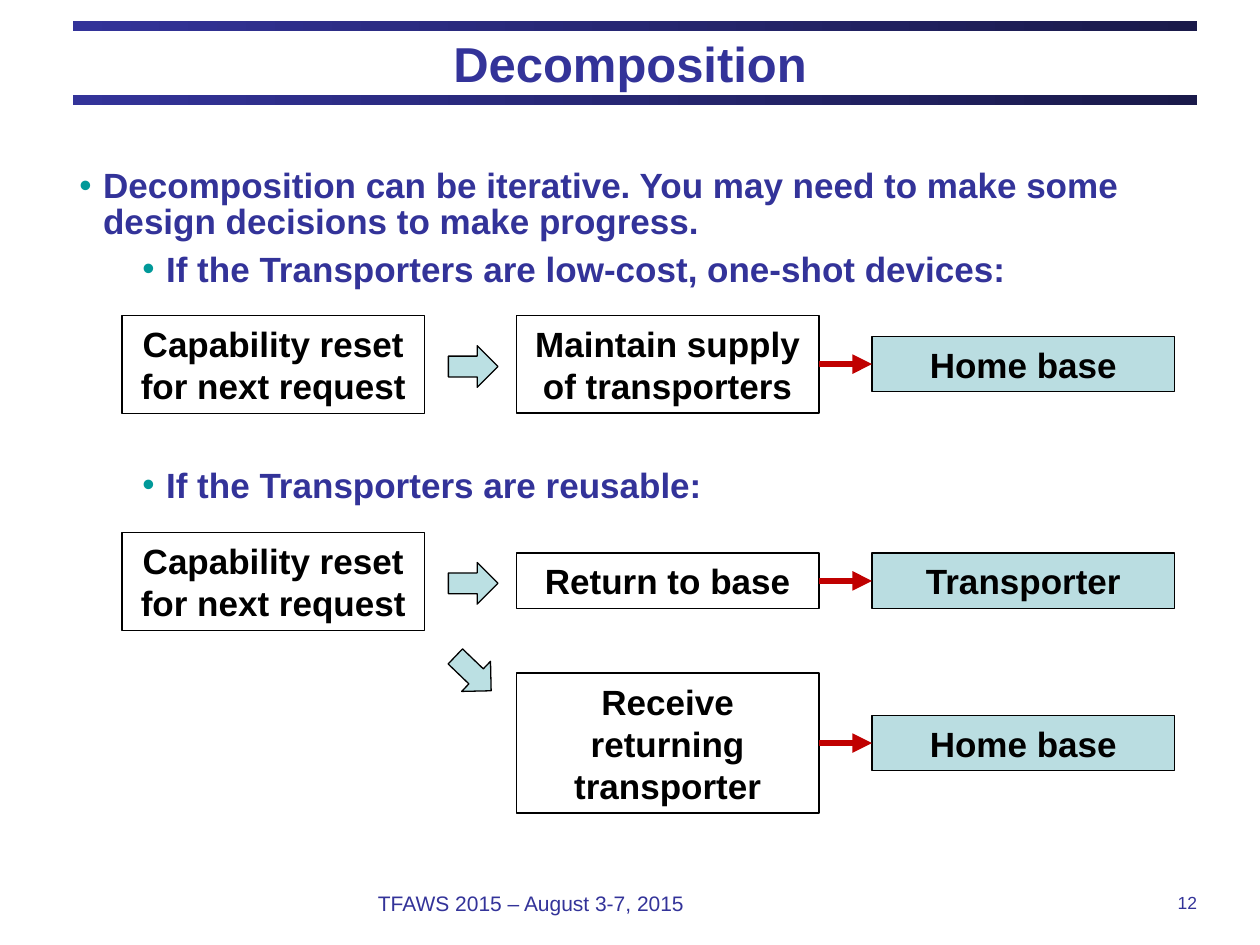
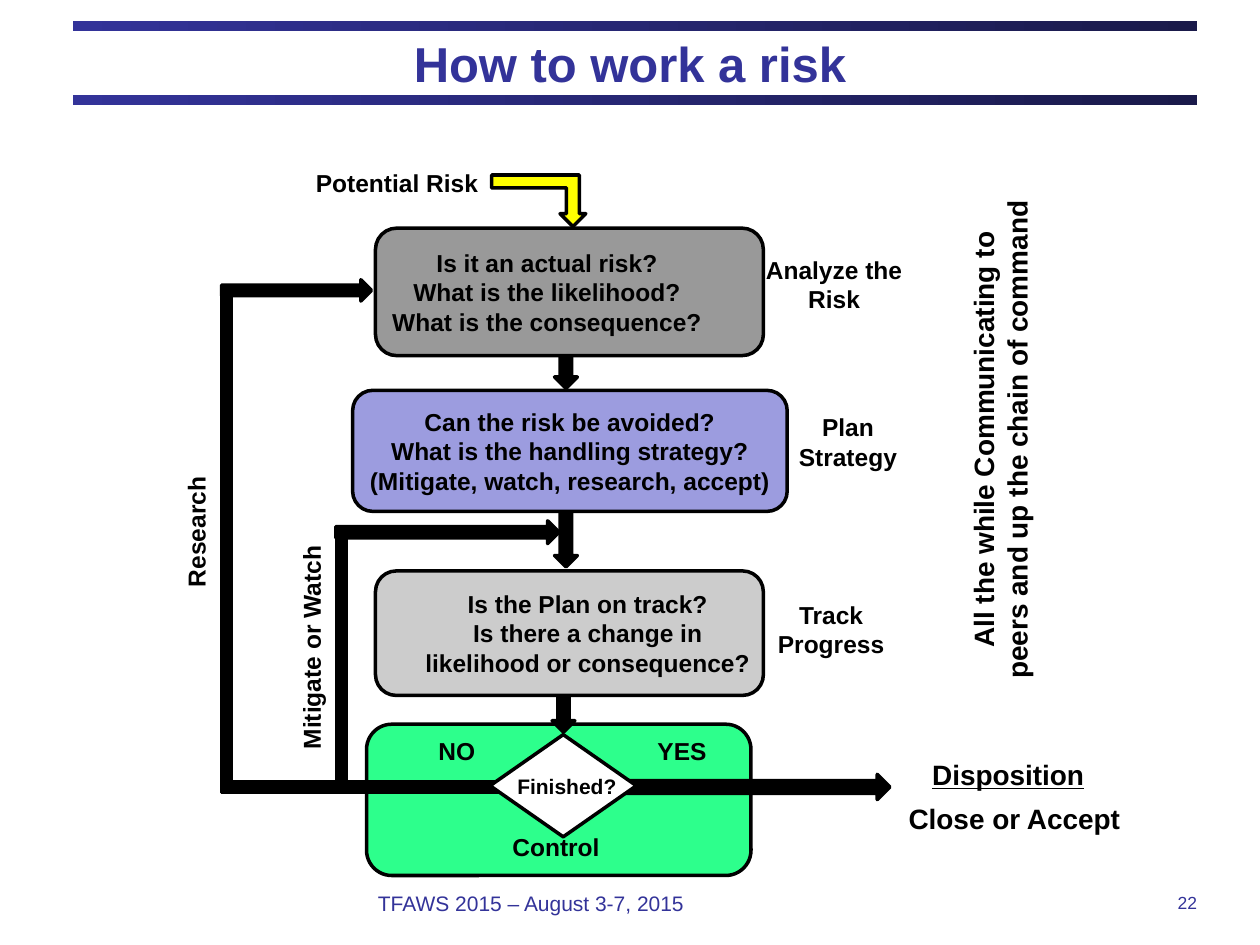
from pptx import Presentation
from pptx.dml.color import RGBColor
from pptx.enum.shapes import MSO_CONNECTOR, MSO_SHAPE
from pptx.enum.text import MSO_ANCHOR, PP_ALIGN
from pptx.oxml.ns import qn
from pptx.util import Cm, Pt
from lxml.etree import SubElement

FONT = "Arial"
NAVY = "333399"
BAND_END = "1A1A4A"
TEAL = "009999"
BLACK = "000000"
WHITE = "FFFFFF"
YELLOW = "FFFF00"
ARROW_BLUE = "BBE0E3"
OWNER_BLUE = "BADDE1"
RED = "C00000"

COLUMNS = (2.46, 10.41, 17.58)
BOX_WIDTH = 6.1


def color(hex_string):
    """Turn a hex string into a colour."""
    return RGBColor.from_string(hex_string)


def lengths(*values):
    """Convert numbers of centimetres to lengths."""
    return [Cm(value) for value in values]


def style_text(text_frame, size, hex_color=BLACK, bold=True, align=PP_ALIGN.CENTER):
    """Format every paragraph and run of a text frame."""
    for paragraph in text_frame.paragraphs:
        paragraph.alignment = align
        for run in paragraph.runs:
            run.font.name = FONT
            run.font.size = Pt(size)
            run.font.bold = bold
            run.font.color.rgb = color(hex_color)


def set_insets(text_frame, left=0, right=0, top=0, bottom=0):
    """Set the inner margins of a text frame in centimetres."""
    text_frame.margin_left, text_frame.margin_right = lengths(left, right)
    text_frame.margin_top, text_frame.margin_bottom = lengths(top, bottom)


def add_text(slide, box, text, size, hex_color=BLACK, bold=True,
             align=PP_ALIGN.CENTER, rotation=0):
    """Add a vertically centred text box without insets."""
    shape = slide.shapes.add_textbox(*lengths(*box))
    shape.rotation = rotation
    text_frame = shape.text_frame
    text_frame.word_wrap = True
    text_frame.vertical_anchor = MSO_ANCHOR.MIDDLE
    set_insets(text_frame)
    text_frame.text = text
    style_text(text_frame, size, hex_color, bold, align)
    return shape


def add_block(slide, kind, box, fill=BLACK, line_width=2.0):
    """Add a flat preset shape with a black outline."""
    shape = slide.shapes.add_shape(kind, *lengths(*box))
    shape.shadow.inherit = False
    shape.fill.solid()
    shape.fill.fore_color.rgb = color(fill)
    shape.line.color.rgb = color(BLACK)
    shape.line.width = Pt(line_width)
    return shape


def add_band(slide, top):
    """Add one horizontal gradient band of the title area."""
    band = slide.shapes.add_shape(MSO_SHAPE.RECTANGLE, *lengths(1.47, top, 22.66, 0.2))
    band.shadow.inherit = False
    band.line.fill.background()
    band.fill.gradient()
    band.fill.gradient_angle = 0
    for stop, hex_color, position in zip(band.fill.gradient_stops, (NAVY, BAND_END), (0, 1)):
        stop.color.rgb = color(hex_color)
        stop.position = position


def add_titled_slide(presentation, title, number):
    """Add a slide with its bands, title, footer and page number."""
    slide = presentation.slides.add_slide(presentation.slide_layouts[5])
    for top in (0.43, 1.91):
        add_band(slide, top)
    placeholder = slide.shapes.title
    placeholder.left, placeholder.top, placeholder.width, placeholder.height = lengths(
        1.27, 0.53, 22.86, 1.47)
    text_frame = placeholder.text_frame
    text_frame.text = title
    text_frame.vertical_anchor = MSO_ANCHOR.MIDDLE
    set_insets(text_frame, 0.25, 0.25)
    style_text(text_frame, 28, NAVY)
    add_text(slide, (7.62, 17.78, 10.16, 0.84), "TFAWS 2015 – August 3-7, 2015",
             12, NAVY, False, PP_ALIGN.LEFT)
    add_text(slide, (18.85, 17.78, 5.28, 0.84), number, 10, NAVY, False, PP_ALIGN.RIGHT)
    return slide


def add_bullets(slide, top, items):
    """Add a bulleted text box from pairs of level and text."""
    shape = slide.shapes.add_textbox(*lengths(1.35, top, 23.01, 2.64))
    text_frame = shape.text_frame
    text_frame.word_wrap = True
    text_frame.text = "\n".join(text for level, text in items)
    for index, (level, text) in enumerate(items):
        paragraph = text_frame.paragraphs[index]
        paragraph.level = level
        properties = paragraph._p.get_or_add_pPr()
        properties.set("marL", str(Cm(0.48 + 1.27 * level)))
        properties.set("indent", str(Cm(-0.48)))
        bullet_color = SubElement(properties, qn("a:buClr"))
        SubElement(bullet_color, qn("a:srgbClr")).set("val", TEAL)
        SubElement(properties, qn("a:buFont")).set("typeface", FONT)
        SubElement(properties, qn("a:buChar")).set("char", "•")
        paragraph.line_spacing = 0.85
        if index:
            paragraph.space_before = Pt(7)
    style_text(text_frame, 20, NAVY, align=PP_ALIGN.LEFT)


def add_function_box(slide, text, column, middle, lines=1, fill=WHITE):
    """Add a box in a column, as tall as its lines of text need."""
    height = 0.27 + 0.85 * lines
    box = (COLUMNS[column], middle - height / 2, BOX_WIDTH, height)
    shape = add_block(slide, MSO_SHAPE.RECTANGLE, box, fill, 0.75)
    shape.text_frame.word_wrap = True
    shape.text_frame.text = text
    style_text(shape.text_frame, 20)
    return shape


def add_allocation(slide, function, owner, middle, lines=1):
    """Add a function box joined by a red arrow to its owner."""
    source = add_function_box(slide, function, 1, middle, lines)
    target = add_function_box(slide, owner, 2, middle, fill=OWNER_BLUE)
    connector = slide.shapes.add_connector(MSO_CONNECTOR.STRAIGHT, 0, 0, 0, 0)
    connector.begin_connect(source, 3)
    connector.end_connect(target, 1)
    connector.line.color.rgb = color(RED)
    connector.line.width = Pt(3.75)
    SubElement(connector.line._get_or_add_ln(), qn("a:tailEnd")).set("type", "triangle")
    SubElement(connector._element.spPr, qn("a:effectLst"))


def add_step_arrow(slide, middle, rotation=0):
    """Add a pale block arrow between the first two columns."""
    arrow = add_block(slide, MSO_SHAPE.RIGHT_ARROW, (9.04, middle - 0.42, 1, 0.84),
                      ARROW_BLUE, 0.75)
    arrow.rotation = rotation


def add_stage(slide, kind, box, fill, text="", size=14, left=0, right=0):
    """Add a stage of the risk process with its questions."""
    shape = add_block(slide, kind, box, fill)
    text_frame = shape.text_frame
    text_frame.word_wrap = False
    set_insets(text_frame, left, right)
    text_frame.text = text
    style_text(text_frame, size)


def build_decomposition(presentation):
    """Build the slide on decomposing a capability."""
    slide = add_titled_slide(presentation, "Decomposition", "12")
    add_bullets(slide, 3.31, [
        (0, "Decomposition can be iterative. You may need to make some "
            "design decisions to make progress."),
        (1, "If the Transporters are low-cost, one-shot devices:"),
    ])
    add_bullets(slide, 9.35, [(1, "If the Transporters are reusable:")])
    for middle in (7.35, 11.72):
        add_function_box(slide, "Capability reset for next request", 0, middle, 2)
        add_step_arrow(slide, middle + 0.04)
    add_step_arrow(slide, 13.58, 43.8)
    add_allocation(slide, "Maintain supply of transporters", "Home base", 7.34, 2)
    add_allocation(slide, "Return to base", "Transporter", 11.71)
    add_allocation(slide, "Receive returning transporter", "Home base", 14.98, 3)


def build_risk_process(presentation):
    """Build the flow chart for working a risk."""
    slide = add_titled_slide(presentation, "How to work a risk", "22")
    rounded = MSO_SHAPE.ROUNDED_RECTANGLE
    add_stage(slide, rounded, (7.39, 14.6, 7.75, 3.05), "2DFF8C")

    for box in ((12.43, 15.61, 5.51, 0.51), (6.77, 10.5, 4.5, 0.46), (4.47, 5.64, 3.02, 0.43)):
        add_block(slide, MSO_SHAPE.RIGHT_ARROW, box)
    for box in ((11.13, 12.98, 0.46, 1.78), (11.18, 9.65, 0.46, 1.78), (11.18, 6.48, 0.46, 1.35)):
        add_block(slide, MSO_SHAPE.DOWN_ARROW, box)
    for box in ((4.47, 15.77, 5.84, 0.2), (6.78, 10.72, 0.2, 5.13), (4.47, 5.87, 0.2, 10.11)):
        add_block(slide, MSO_SHAPE.RECTANGLE, box)
    entry = add_block(slide, MSO_SHAPE.BENT_UP_ARROW, (9.91, 3.53, 1.9, 1.04), YELLOW)
    entry._element.spPr.get_or_add_xfrm().set("flipV", "1")

    add_stage(slide, rounded, (7.57, 4.6, 7.82, 2.57), "999999",
              "Is it an actual risk?\nWhat is the likelihood?\nWhat is the consequence?",
              right=0.9)
    add_stage(slide, rounded, (7.11, 7.87, 8.76, 2.44), "9C9CDF",
              "Can the risk be avoided?\nWhat is the handling strategy?\n"
              "(Mitigate, watch, research, accept)")
    add_stage(slide, rounded, (7.57, 11.51, 7.82, 2.51), "CCCCCC",
              "Is the Plan on track?\nIs there a change in\nlikelihood or consequence?",
              left=0.74)
    add_stage(slide, MSO_SHAPE.FLOWCHART_DECISION, (9.88, 14.81, 2.95, 2.06), WHITE,
              "Finished?", 12, left=0.15)

    labels = [
        ("Potential Risk", (6.1, 3.25, 3.81, 0.86)),
        ("Analyze the Risk", (15.42, 5, 2.79, 1.45)),
        ("Plan\nStrategy", (15.85, 8.18, 2.49, 1.45)),
        ("Track\nProgress", (15.42, 11.96, 2.67, 1.45)),
        ("NO", (8.59, 14.71, 1.24, 0.86)),
        ("YES", (13, 14.71, 1.5, 0.86)),
        ("Control", (10.08, 16.64, 2.26, 0.86)),
    ]
    for text, box in labels:
        add_text(slide, box, text, 14)
    add_text(slide, (3.3, 12.62, 5.94, 0.86), "Mitigate or Watch", 14, rotation=270)
    add_text(slide, (2.26, 10.29, 3.38, 0.86), "Research", 14, rotation=270)
    add_text(slide, (15.24, 8.05, 9.83, 1.63),
             "All the while Communicating to peers and up the chain of command",
             16, rotation=270)
    disposition = add_text(slide, (18.52, 15.14, 3.61, 0.94), "Disposition", 16)
    disposition.text_frame.paragraphs[0].runs[0].font.underline = True
    add_text(slide, (17.58, 16.03, 5.74, 0.94), "Close or Accept", 16)


def main():
    """Create the presentation and save it."""
    presentation = Presentation()
    presentation.slide_width, presentation.slide_height = lengths(25.4, 19.05)
    build_decomposition(presentation)
    build_risk_process(presentation)
    presentation.save("out.pptx")


if __name__ == "__main__":
    main()
